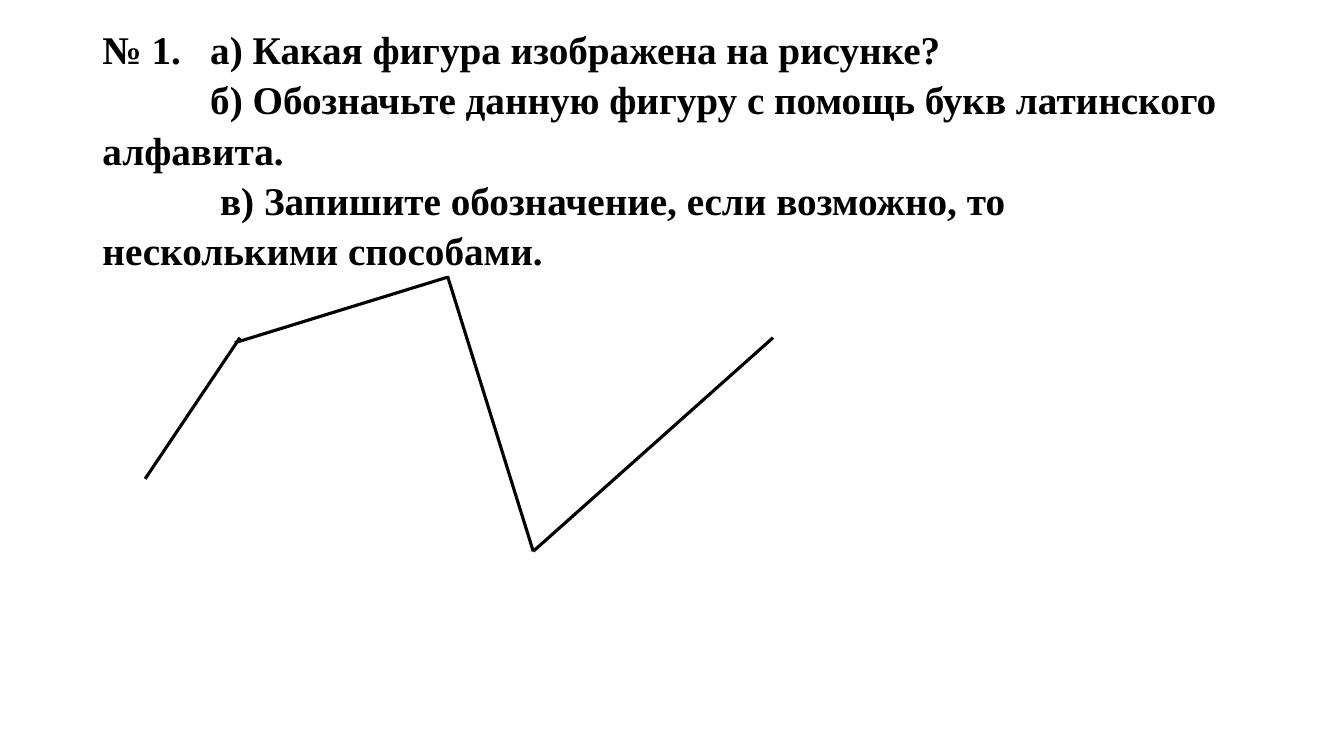
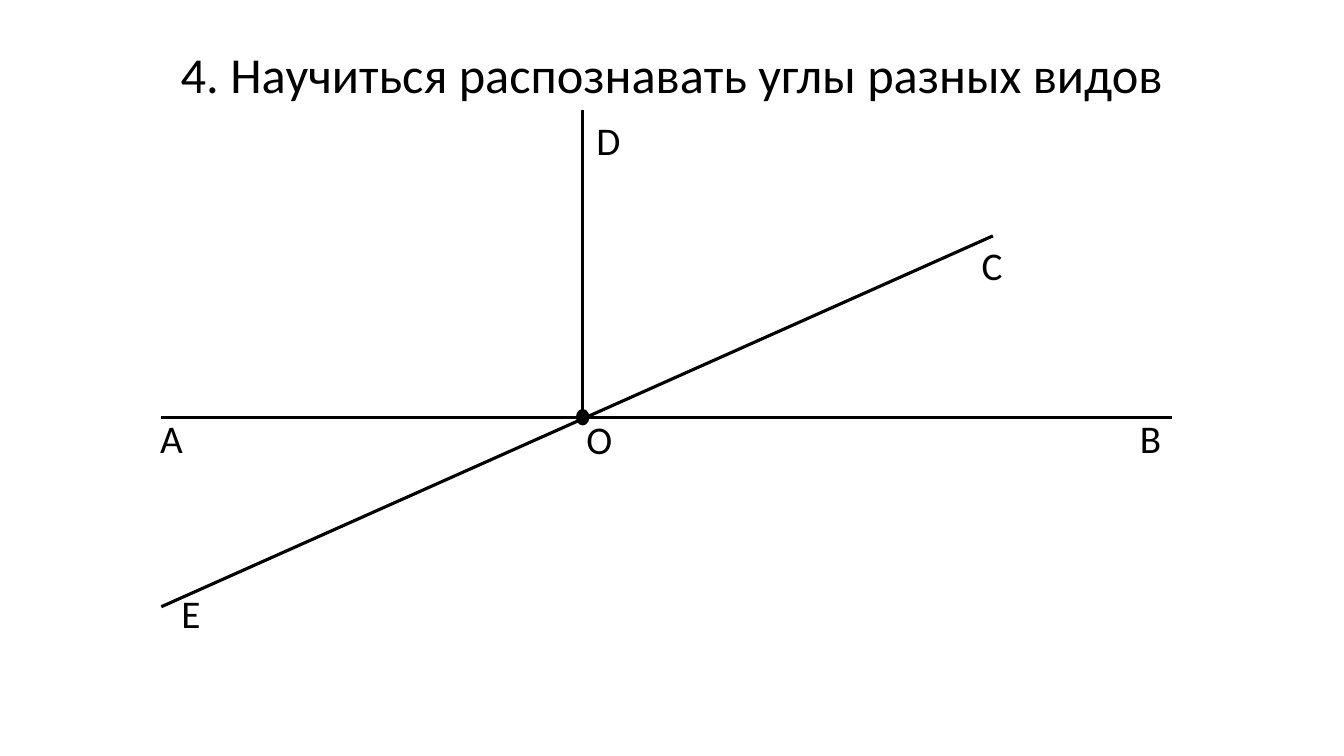
from dataclasses import dataclass
from typing import Any, NamedTuple

from lxml.etree import SubElement
from pptx import Presentation
from pptx.dml.color import RGBColor
from pptx.enum.shapes import MSO_CONNECTOR, MSO_SHAPE
from pptx.enum.text import MSO_ANCHOR, MSO_AUTO_SIZE, PP_ALIGN
from pptx.oxml.ns import qn
from pptx.slide import Slide
from pptx.util import Pt

INK = "000000"
LINE_WIDTH = 2.25
TITLE_LEFT, TITLE_WIDTH = 66, 828
LABEL_HEIGHT = 41
TITLE_ONLY = 5


class Segment(NamedTuple):
    x1: float
    y1: float
    x2: float
    y2: float


class PointLabel(NamedTuple):
    letter: str
    left: float
    top: float
    width: float


class TitleLine(NamedTuple):
    text: str
    indent: float = 0
    tab: float = 0


@dataclass(frozen=True)
class TitleStyle:
    top: float
    height: float
    font: str
    size: float
    bold: bool
    align: PP_ALIGN
    line_spacing: Any


TASK_STYLE = TitleStyle(12, 188, "Times New Roman", 28, True, PP_ALIGN.LEFT, Pt(36))
TOPIC_STYLE = TitleStyle(32, 48, "Calibri", 36, False, PP_ALIGN.CENTER, 0.9)

TASK_LINES = [
    TitleLine("№ 1.\tа) Какая фигура изображена на рисунке?", tab=77),
    TitleLine("б) Обозначьте данную фигуру с помощь букв латинского алфавита.", indent=77),
    TitleLine("в) Запишите обозначение, если возможно, то несколькими способами.", indent=84),
]
TOPIC_LINES = [TitleLine("4. Научиться распознавать углы разных видов")]

POLYLINE = [
    Segment(171.4, 241.2, 103.7, 342),
    Segment(167.8, 244.8, 319.7, 198),
    Segment(319.7, 197.3, 380.9, 393.8),
    Segment(380.9, 393.8, 552.2, 241.2),
]
VERTEX_X, VERTEX_Y = 416.2, 298
ANGLE_SIDES = [
    Segment(115.2, 433.4, 709.2, 168.5),
    Segment(115.2, VERTEX_Y, 837.4, VERTEX_Y),
    Segment(VERTEX_X, VERTEX_Y, VERTEX_X, 78.5),
]
POINT_LABELS = [
    PointLabel("А", 107.3, 292.3, 31),
    PointLabel("В", 807.1, 292.3, 30.2),
    PointLabel("О", 411.8, 293, 33.1),
    PointLabel("С", 694.1, 168.5, 29.5),
    PointLabel("D", 419, 79.2, 31.7),
    PointLabel("Е", 122.4, 417.6, 28.1),
]


def color(value: str) -> RGBColor:
    return RGBColor.from_string(value)


def apply(target: Any, values: dict[str, Any]) -> None:
    """Set each named attribute of target."""
    for name, value in values.items():
        setattr(target, name, value)


def format_font(font: Any, name: str, size: float, bold: bool = False) -> None:
    apply(font, {"name": name, "size": Pt(size), "bold": bold})
    font.color.rgb = color(INK)


def set_title(slide: Slide, lines: list[TitleLine], style: TitleStyle) -> None:
    title = slide.shapes.title
    apply(title, {"left": Pt(TITLE_LEFT), "top": Pt(style.top),
                  "width": Pt(TITLE_WIDTH), "height": Pt(style.height)})
    frame = title.text_frame
    apply(frame, {"word_wrap": True, "auto_size": MSO_AUTO_SIZE.NONE,
                  "vertical_anchor": MSO_ANCHOR.TOP})
    for number, line in enumerate(lines):
        paragraph = frame.add_paragraph() if number else frame.paragraphs[0]
        paragraph.text = line.text
        apply(paragraph, {"alignment": style.align, "line_spacing": style.line_spacing})
        properties = paragraph._p.get_or_add_pPr()
        if line.indent:
            properties.set("indent", str(Pt(line.indent)))
        if line.tab:
            tabs = SubElement(properties, qn("a:tabLst"))
            SubElement(tabs, qn("a:tab"), pos=str(Pt(line.tab)), algn="l")
        format_font(paragraph.font, style.font, style.size, style.bold)


def draw_segment(slide: Slide, segment: Segment) -> None:
    connector = slide.shapes.add_connector(
        MSO_CONNECTOR.STRAIGHT, *(Pt(value) for value in segment))
    connector.line.color.rgb = color(INK)
    connector.line.width = Pt(LINE_WIDTH)
    SubElement(connector._element.spPr, qn("a:effectLst"))


def draw_vertex(slide: Slide, width: float = 8.6, height: float = 10.8) -> None:
    vertex = slide.shapes.add_shape(
        MSO_SHAPE.OVAL, Pt(VERTEX_X - width / 2), Pt(VERTEX_Y - height / 2),
        Pt(width), Pt(height))
    vertex.shadow.inherit = False
    vertex.fill.solid()
    vertex.fill.fore_color.rgb = color(INK)
    vertex.line.color.rgb = color(INK)
    vertex.line.width = Pt(1)


def draw_label(slide: Slide, label: PointLabel) -> None:
    frame = slide.shapes.add_textbox(
        Pt(label.left), Pt(label.top), Pt(label.width), Pt(LABEL_HEIGHT)).text_frame
    apply(frame, {"word_wrap": False, "auto_size": MSO_AUTO_SIZE.SHAPE_TO_FIT_TEXT})
    frame.text = label.letter
    format_font(frame.paragraphs[0].font, "Calibri", 28)


def add_figure_slide(presentation: Any, lines: list[TitleLine], style: TitleStyle,
                     segments: list[Segment]) -> Slide:
    slide = presentation.slides.add_slide(presentation.slide_layouts[TITLE_ONLY])
    set_title(slide, lines, style)
    for segment in segments:
        draw_segment(slide, segment)
    return slide


def main() -> None:
    presentation = Presentation()
    apply(presentation, {"slide_width": Pt(960), "slide_height": Pt(540)})
    add_figure_slide(presentation, TASK_LINES, TASK_STYLE, POLYLINE)
    angles = add_figure_slide(presentation, TOPIC_LINES, TOPIC_STYLE, ANGLE_SIDES)
    draw_vertex(angles)
    for label in POINT_LABELS:
        draw_label(angles, label)
    presentation.save("out.pptx")


if __name__ == "__main__":
    main()
